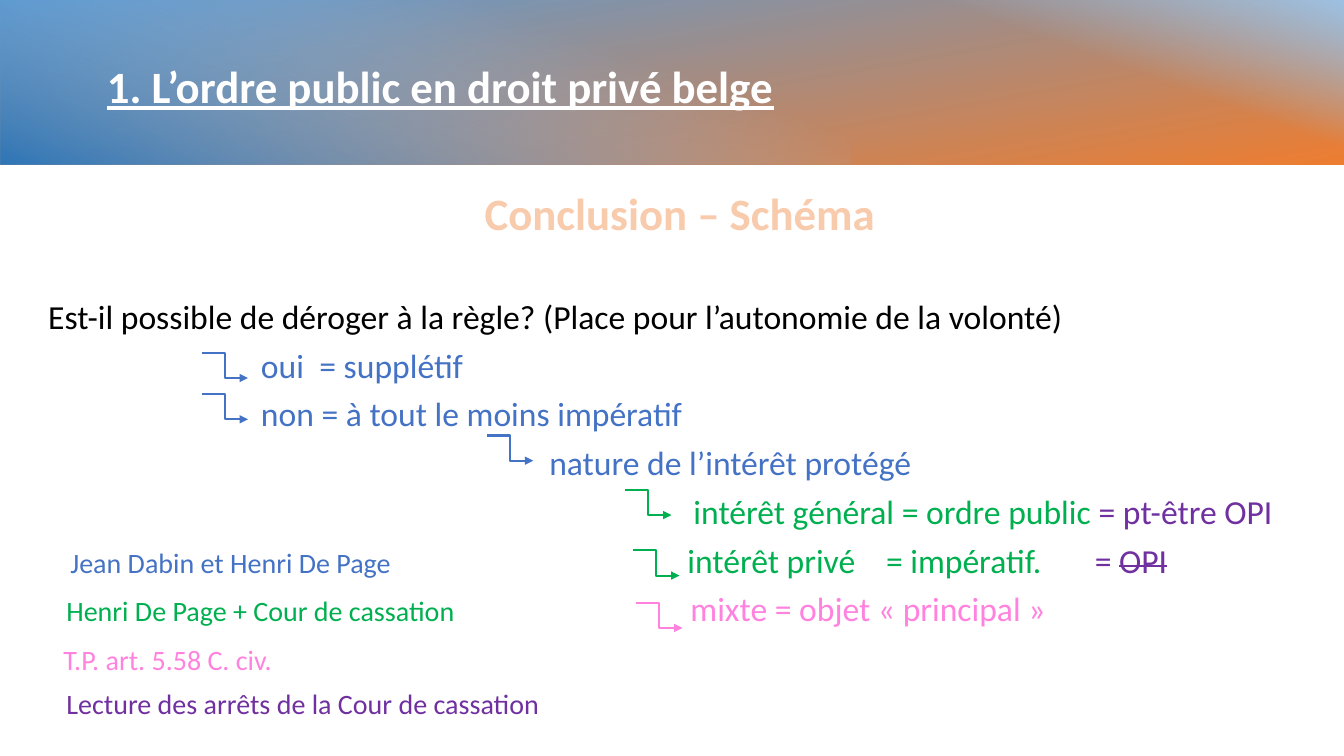
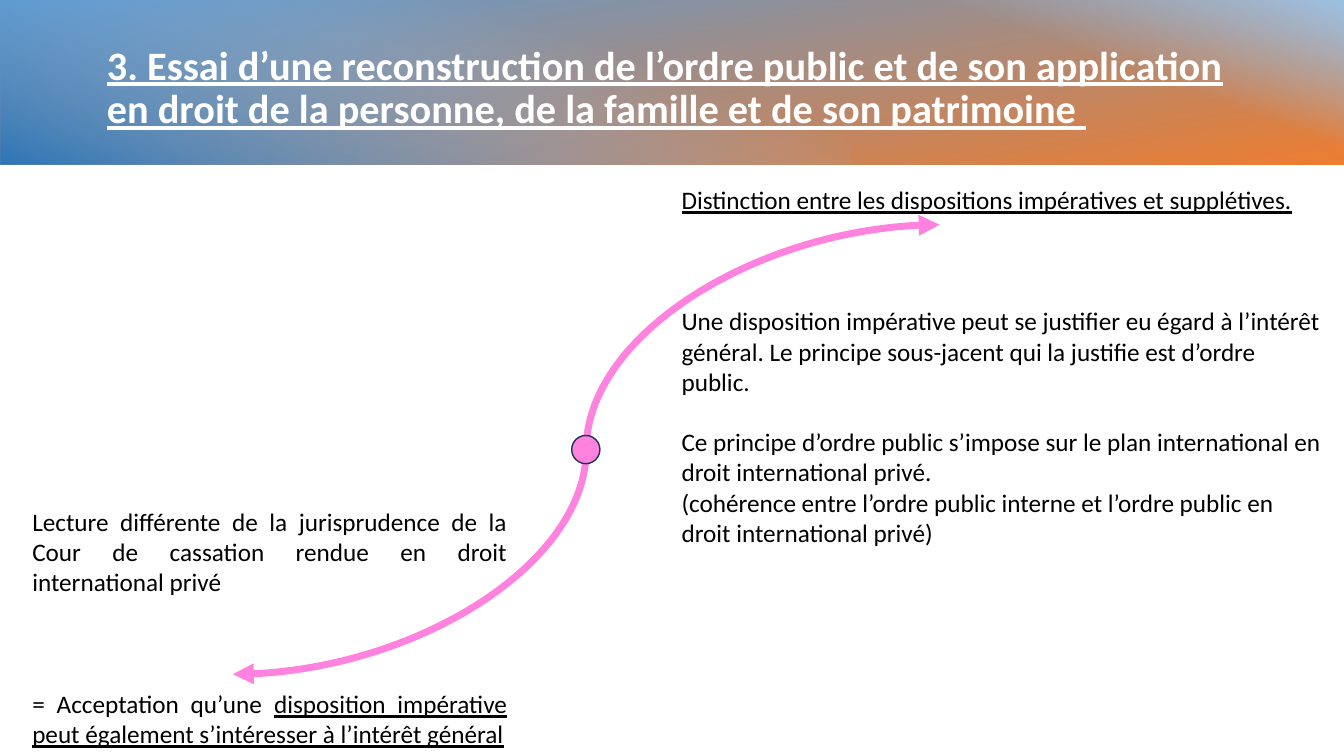
import pptx
import pptx.dml.color
import pptx.enum.dml
import pptx.enum.shapes
import pptx.enum.text
import pptx.oxml
import pptx.oxml.ns
import pptx.util
from lxml import etree

Inches = pptx.util.Inches
Pt = pptx.util.Pt
ALIGN = pptx.enum.text.PP_ALIGN
CONNECTOR = pptx.enum.shapes.MSO_CONNECTOR
SHAPE = pptx.enum.shapes.MSO_SHAPE

FONT = "Calibri"
WHITE, BLACK, PEACH = "FFFFFF", "000000", "F8CBAD"
BLUE, GREEN, PURPLE, PINK = "4472C4", "00B050", "7030A0", "FF82DF"
NAVY = "1E3256"

# Band layers: box, rotation, clockwise angle, stops (position, colour, opaque)
BAND = [
    ((5.84, -5.87, 1.66, 13.34), 270, 170,
     [(0, "5B9BD5", True), (1, "ED7D31", True)]),
    ((9.75, -1.97, 1.65, 5.54), 270, 20,
     [(0.59, "9DC3E6", False), (1, "9DC3E6", True)]),
    ((3.39, -3.42, 1.66, 8.44), 90, 20,
     [(0.29, "9DC3E6", False), (1, "2E75B6", True)]),
]


def rgb(color):
    return pptx.dml.color.RGBColor.from_string(color)


def sub(parent, tag, **attrs):
    """Append an XML child such as a:tailEnd."""
    return etree.SubElement(parent, pptx.oxml.ns.qn(tag), attrs)


def add_text(p, text, size=18, color=BLACK, bold=False, underline=False,
             strike=False):
    r = p.add_run()
    r.text = text
    f = r.font
    f.name, f.size, f.bold, f.underline = FONT, Pt(size), bold, underline
    f.color.rgb = rgb(color)
    if strike:
        r._r.get_or_add_rPr().set("strike", "sngStrike")
    return r


class Deck:
    def __init__(self):
        self.prs = pptx.Presentation()
        self.prs.slide_width = Inches(13.33)
        self.prs.slide_height = Inches(7.5)
        self.s = None

    def slide(self, layout, title, size):
        self.s = self.prs.slides.add_slide(self.prs.slide_layouts[layout])
        self.band()
        tf = self.place(0, 0.96, 0.33, 11.46, 1.1)
        tf.vertical_anchor = pptx.enum.text.MSO_ANCHOR.MIDDLE
        p = self.paragraph(tf)
        p.line_spacing = 0.9
        add_text(p, title, size=size, color=WHITE, bold=True, underline=True)

    def band(self):
        """Layer the gradients behind the placeholders."""
        for i, (box, rotation, angle, stops) in enumerate(BAND):
            sp = self.shape(SHAPE.RECTANGLE, *box)
            sp.rotation = rotation
            sp.line.fill.background()
            sp.fill.gradient()
            sp.fill.gradient_angle = 360 - angle
            for stop, (pos, color, opaque) in zip(sp.fill.gradient_stops, stops):
                stop.position = pos
                stop.color.rgb = rgb(color)
                if not opaque:
                    clr = stop._gs.find(pptx.oxml.ns.qn("a:srgbClr"))
                    sub(clr, "a:alpha", val="0")
            self.s.shapes._spTree.insert(2 + i, sp._element)

    def shape(self, kind, x, y, w, h):
        sp = self.s.shapes.add_shape(kind, Inches(x), Inches(y), Inches(w), Inches(h))
        sp.shadow.inherit = False
        return sp

    def place(self, idx, x, y, w, h):
        """Move a placeholder and return its text frame."""
        sp = self.s.placeholders[idx]
        sp.left, sp.top, sp.width, sp.height = map(Inches, (x, y, w, h))
        tf = sp.text_frame
        tf.word_wrap = True
        tf.auto_size = pptx.enum.text.MSO_AUTO_SIZE.NONE
        return tf

    def text_box(self, x, y, w, h):
        """Add a free text box, whose paragraphs keep their own tab stops."""
        tf = self.s.shapes.add_textbox(*map(Inches, (x, y, w, h))).text_frame
        tf.word_wrap = True
        return tf

    def paragraph(self, tf, align=ALIGN.LEFT, before=0, after=0, tabs=None):
        """Start a paragraph: unbulleted, or with tab stops if a list is given."""
        first = tf.paragraphs[0]
        p = tf.add_paragraph() if first.runs else first
        p.alignment = align
        p.space_before, p.space_after = Pt(before), Pt(after)
        pPr = p._p.get_or_add_pPr()
        if tabs is None:
            pPr.set("marL", "0")
            pPr.set("indent", "0")
            sub(pPr, "a:buNone")
        elif tabs:
            tab_list = sub(pPr, "a:tabLst")
            for x in tabs:
                sub(tab_list, "a:tab", pos=str(int(Inches(x))), algn="l")
        return p

    def row(self, tf, *cells, before=0, after=6):
        """Write (tab position or None, text, format) cells on one line."""
        tabs = [x for x, _, _ in cells if x is not None]
        p = self.paragraph(tf, before=before, after=after, tabs=tabs)
        for x, text, fmt in cells:
            add_text(p, text if x is None else "\t" + text, **fmt)

    def arrow(self, kind, start, end, color, width, both=False):
        c = self.s.shapes.add_connector(kind, *map(Inches, start + end))
        c.line.color.rgb = rgb(color)
        c.line.width = Pt(width)
        ln = c.line._get_or_add_ln()
        if both:
            sub(ln, "a:headEnd", type="triangle")
        sub(ln, "a:tailEnd", type="triangle")
        sub(c._element.spPr, "a:effectLst")

    def dot(self, x, y, d, color, outline):
        sp = self.shape(SHAPE.OVAL, x, y, d, d)
        sp.fill.solid()
        sp.fill.fore_color.rgb = rgb(color)
        sp.line.color.rgb = rgb(outline)
        sp.line.width = Pt(1)


def schema_slide(deck):
    deck.slide(5, "1. L’ordre public en droit privé belge", 32)
    tf = deck.text_box(0.38, 1.79, 12.73, 5.56)
    p = deck.paragraph(tf, align=ALIGN.CENTER, after=40.5, tabs=[])
    add_text(p, "Conclusion – Schéma", size=32, color=PEACH, bold=True)

    def big(color):
        return {"size": 24, "color": color}

    def small(color):
        return {"size": 20, "color": color}

    # Decision tree, with the sources at left
    deck.row(tf, (None, "Est-il possible de déroger à la règle? "
                  "(Place pour l’autonomie de la volonté)", big(BLACK)))
    deck.row(tf, (2.11, "oui", big(BLUE)), (2.69, "= supplétif", big(BLUE)))
    deck.row(tf, (2.11, "non = à tout le moins impératif", big(BLUE)))
    deck.row(tf, (4.97, "nature de l’intérêt protégé", big(BLUE)))
    deck.row(tf, (6.4, "intérêt général = ordre public ", big(GREEN)),
             (None, "= pt-être OPI", big(PURPLE)))
    deck.row(tf, (0.22, "Jean Dabin et Henri De Page", small(BLUE)),
             (6.34, "intérêt privé", big(GREEN)),
             (8.31, "= impératif.", big(GREEN)),
             (10.38, "= ", big(PURPLE)),
             (None, "OPI", {**big(PURPLE), "strike": True}))
    deck.row(tf, (0.18, "Henri De Page + Cour de cassation", small(GREEN)),
             (6.37, "mixte = objet « principal »", big(PINK)))
    deck.row(tf, (0.15, "T.P. art. 5.58 C. civ.", small(PINK)), before=4, after=7)
    deck.row(tf, (0.18, "Lecture des arrêts de la Cour de cassation", small(PURPLE)))

    # Branch arrows
    for x, y, color in [(2, 3.5, BLUE), (2, 3.91, BLUE), (4.83, 4.32, BLUE),
                        (6.2, 4.86, GREEN), (6.28, 5.46, GREEN), (6.31, 5.98, PINK)]:
        deck.arrow(CONNECTOR.ELBOW, (x, y), (x + 0.46, y + 0.25), color, 1.5)


def reconstruction_slide(deck):
    deck.slide(3, "3. Essai d’une reconstruction de l’ordre public et de son "
               "application en droit de la personne, de la famille et de son "
               "patrimoine ", 28.8)
    deck.arrow(CONNECTOR.CURVE, (9.32, 2.23), (2.31, 6.69), PINK, 5, both=True)

    # Reading of the case law
    tf = deck.place(1, 0.22, 4.97, 4.91, 2.52)
    p = deck.paragraph(tf, align=ALIGN.JUSTIFY, after=65.5)
    add_text(p, "Lecture différente de la jurisprudence de la Cour de cassation "
             "rendue en droit international privé")
    p = deck.paragraph(tf, align=ALIGN.JUSTIFY)
    add_text(p, "= Acceptation qu’une ")
    add_text(p, "disposition impérative peut également s’intéresser à "
             "l’intérêt général", underline=True)

    # Distinction and its consequences
    tf = deck.place(2, 6.66, 1.78, 6.6, 3.74)
    for text, after, underline in [
        ("Distinction entre les dispositions impératives et supplétives.", 65, True),
        ("Une disposition impérative peut se justifier eu égard à l’intérêt général. "
         "Le principe sous-jacent qui la justifie est d’ordre public.", 21.5, False),
        ("Ce principe d’ordre public s’impose sur le plan international en droit "
         "international privé.", 0, False),
        ("(cohérence entre l’ordre public interne et l’ordre public en droit "
         "international privé)", 0, False),
    ]:
        add_text(deck.paragraph(tf, after=after), text, underline=underline)

    deck.dot(5.67, 4.32, 0.28, PINK, NAVY)


def main():
    deck = Deck()
    schema_slide(deck)
    reconstruction_slide(deck)
    deck.prs.save("out.pptx")


if __name__ == "__main__":
    main()
